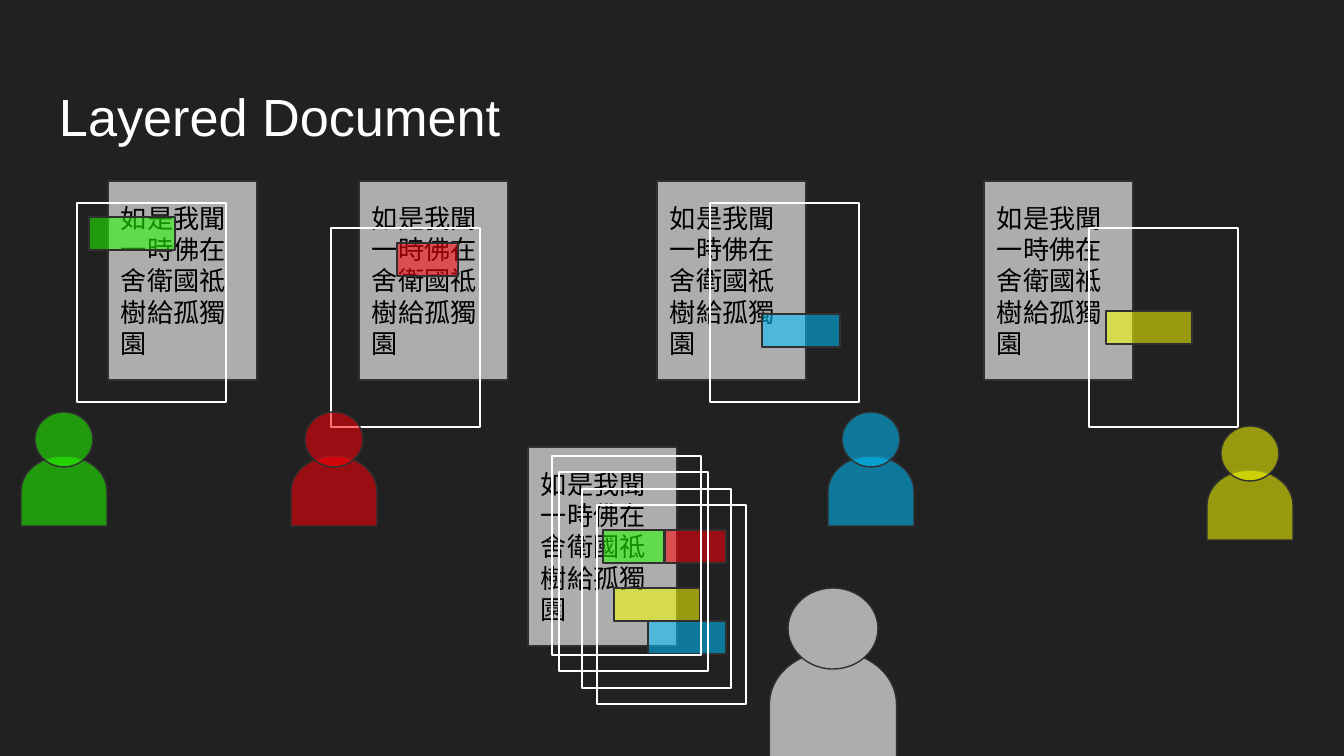
from dataclasses import dataclass

from lxml import etree
from pptx import Presentation
from pptx import util as u
from pptx.dml.color import RGBColor
from pptx.enum import shapes, text
from pptx.oxml.ns import qn

PX = 914400 / 134.4  # EMU in one px

BACKGROUND = RGBColor(0x21, 0x21, 0x21)
OUTLINE = RGBColor(0x30, 0x30, 0x30)
GRAY = RGBColor(0xAD, 0xAD, 0xAD)
WHITE = RGBColor(0xFF, 0xFF, 0xFF)
BLACK = RGBColor(0x00, 0x00, 0x00)
GREEN = RGBColor(0x24, 0xFF, 0x00)
RED = RGBColor(0xFF, 0x00, 0x09)
BLUE = RGBColor(0x00, 0xC1, 0xFF)
YELLOW = RGBColor(0xF8, 0xFF, 0x00)

PAGE_WIDTH, PAGE_HEIGHT = 149, 199
MARK_HEIGHT = 33
INSET = 13
TINT = 55  # opacity of the coloured parts, in percent
SUTRA = "如是我聞一時佛在舍衛國祗樹給孤獨園"

KIND = shapes.MSO_SHAPE


@dataclass(frozen=True)
class Page:
    left: int
    top: int


@dataclass(frozen=True)
class Mark:
    color: RGBColor
    left: int
    top: int
    width: int


@dataclass(frozen=True)
class Person:
    color: RGBColor
    center: int
    top: int
    head: tuple[int, int] = (58, 55)
    body: tuple[int, int] = (86, 70)
    body_drop: int = 44
    opacity: int = TINT


SHEETS = [Page(left, 181) for left in (108, 359, 657, 984)]
FRAMES = [Page(77, 203), Page(331, 228), Page(710, 203), Page(1089, 228)]
MARKS = [
    Mark(GREEN, 89, 217, 86),
    Mark(RED, 397, 243, 61),
    Mark(BLUE, 762, 314, 78),
    Mark(YELLOW, 1106, 311, 86),
]
AUTHORS = [
    Person(GREEN, 64, 412),
    Person(RED, 334, 412),
    Person(BLUE, 871, 412),
    Person(YELLOW, 1250, 426),
]

MERGED_SHEET = Page(528, 447)
MERGED_MARKS = [
    Mark(YELLOW, 614, 588, 86),
    Mark(RED, 665, 530, 61),
    Mark(BLUE, 648, 621, 78),
    Mark(GREEN, 603, 530, 61),
]
MERGED_FRAMES = [Page(552, 456), Page(559, 472), Page(582, 489), Page(597, 505)]
READER = Person(GRAY, 833, 588, head=(90, 81), body=(127, 106), body_drop=63, opacity=100)


def emu(px: float) -> u.Emu:
    return u.Emu(round(px * PX))


def write(shape, words: str, *, size: int, color: RGBColor, anchor, top_inset: int = INSET) -> None:
    frame = shape.text_frame
    frame.word_wrap = True
    frame.auto_size = text.MSO_AUTO_SIZE.NONE
    frame.vertical_anchor = anchor
    frame.margin_left = frame.margin_right = frame.margin_bottom = emu(INSET)
    frame.margin_top = emu(top_inset)
    paragraph = frame.paragraphs[0]
    paragraph.alignment = text.PP_ALIGN.LEFT
    run = paragraph.add_run()
    run.text = words
    run.font.name = "Arial"
    run.font.size = u.Pt(size)
    run.font.color.rgb = color


def draw(parent, kind, left: float, top: float, width: int, height: int, *,
         fill: RGBColor | None = None, opacity: int = 100,
         line: RGBColor = OUTLINE, weight: float = 0.75):
    shape = parent.shapes.add_shape(kind, emu(left), emu(top), emu(width), emu(height))
    shape.shadow.inherit = False
    shape.line.color.rgb = line
    shape.line.width = u.Pt(weight)
    if fill is None:
        shape.fill.background()
        return shape
    shape.fill.solid()
    shape.fill.fore_color.rgb = fill
    if opacity < 100:
        color = shape.fill._xPr.find(qn("a:solidFill"))[0]
        etree.SubElement(color, qn("a:alpha")).set("val", str(opacity * 1000))
    return shape


def draw_sheet(slide, page: Page) -> None:
    sheet = draw(slide, KIND.FLOWCHART_PROCESS, page.left, page.top,
                 PAGE_WIDTH, PAGE_HEIGHT, fill=GRAY)
    write(sheet, SUTRA, size=14, color=BLACK, anchor=text.MSO_ANCHOR.MIDDLE)


def draw_frame(slide, page: Page) -> None:
    draw(slide, KIND.FLOWCHART_PROCESS, page.left, page.top,
         PAGE_WIDTH, PAGE_HEIGHT, line=WHITE, weight=1.5)


def draw_mark(slide, mark: Mark) -> None:
    draw(slide, KIND.RECTANGLE, mark.left, mark.top, mark.width, MARK_HEIGHT,
         fill=mark.color, opacity=TINT)


def draw_person(slide, person: Person) -> None:
    group = slide.shapes.add_group_shape()
    # The body is a delay shape turned upright, so its sides are swapped
    across, high = person.body
    middle = person.top + person.body_drop + high / 2
    body = draw(group, KIND.FLOWCHART_DELAY, person.center - high / 2, middle - across / 2,
                high, across, fill=person.color, opacity=person.opacity)
    body.rotation = 270
    width, height = person.head
    draw(group, KIND.OVAL, person.center - width / 2, person.top, width, height,
         fill=person.color, opacity=person.opacity)


def main() -> None:
    presentation = Presentation()
    presentation.slide_width, presentation.slide_height = emu(1344), emu(756)
    slide = presentation.slides.add_slide(presentation.slide_layouts[5])
    slide.background.fill.solid()
    slide.background.fill.fore_color.rgb = BACKGROUND

    # Title
    title = slide.shapes.title
    title.left, title.top, title.width, title.height = map(emu, (46, 66, 1253, 84))
    write(title, "Layered Document", size=28, color=WHITE,
          anchor=text.MSO_ANCHOR.TOP, top_inset=18)

    # One document, with a separate layer for each author
    for sheet, frame, mark, author in zip(SHEETS, FRAMES, MARKS, AUTHORS):
        draw_sheet(slide, sheet)
        draw_frame(slide, frame)
        draw_mark(slide, mark)
        draw_person(slide, author)

    # All layers stacked for the reader
    draw_sheet(slide, MERGED_SHEET)
    for mark in MERGED_MARKS:
        draw_mark(slide, mark)
    for frame in MERGED_FRAMES:
        draw_frame(slide, frame)
    draw_person(slide, READER)

    presentation.save("out.pptx")


if __name__ == "__main__":
    main()
